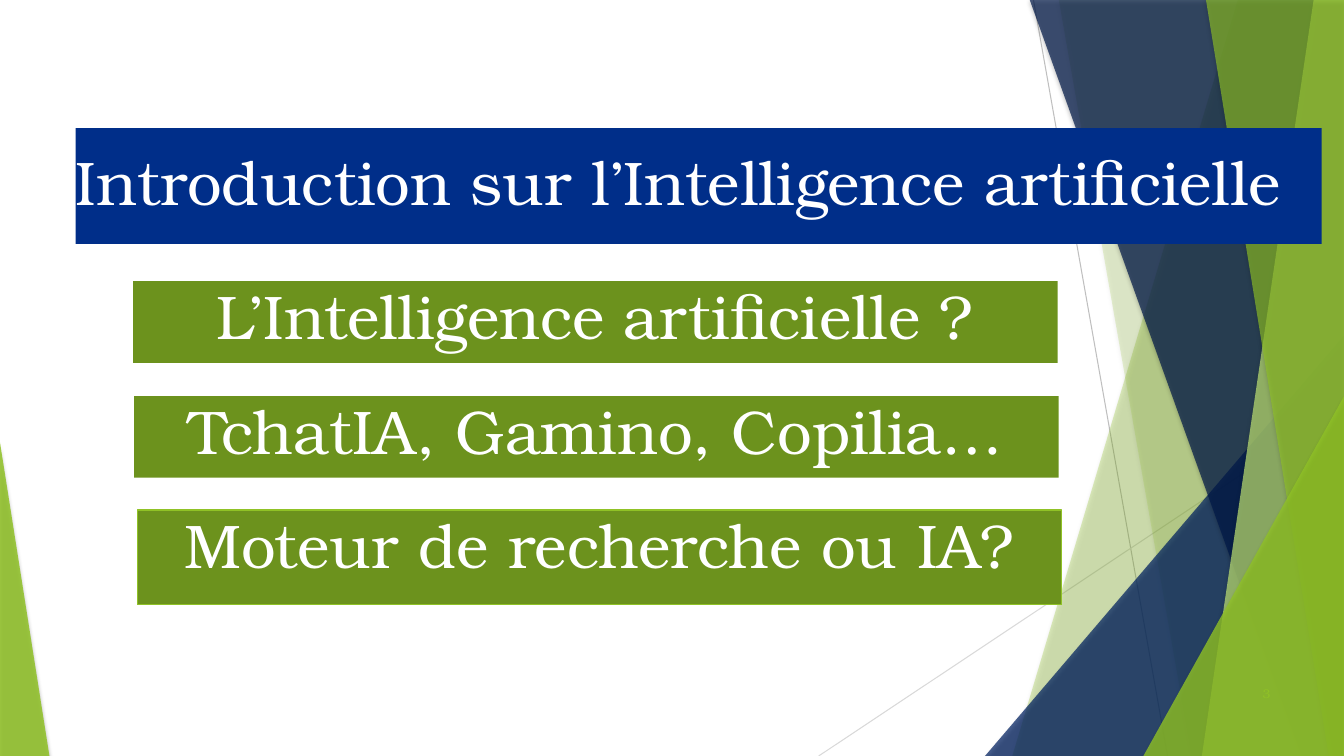
from lxml import etree
from pptx import Presentation
from pptx.dml.color import RGBColor
from pptx.enum import shapes, text
from pptx.oxml.ns import qn
from pptx.util import Inches, Pt

WHITE = RGBColor(0xFF, 0xFF, 0xFF)
BLUE = RGBColor(0x00, 0x2E, 0x89)
MOSS = RGBColor(0x6C, 0x92, 0x1D)
GREEN = RGBColor(0x90, 0xC2, 0x26)
LIME = RGBColor(0xC0, 0xE4, 0x74)
NAVY = RGBColor(0x00, 0x20, 0x60)
DARK_NAVY = RGBColor(0x00, 0x18, 0x48)
GRAY = RGBColor(0xBF, 0xBF, 0xBF)
LIGHT_GRAY = RGBColor(0xD9, 0xD9, 0xD9)
FONT = "TeX Gyre Bonum"
WIDTH, HEIGHT = 13.33, 7.5

THIN_LINES = [
    ((10.25, 0), (11.58, HEIGHT), GRAY),
    ((WIDTH, 4.03), (8.12, HEIGHT), LIGHT_GRAY),
]
# kind, geometry, colour, opacity
DECOR = [
    ("band", (12.28, 10.04), GREEN, 30),
    ("band", (10.5, 11.82), GREEN, 20),
    ("triangle", (9.77, 3.33, 3.56, 1), NAVY, 72),
    ("band", (10.21, 12.91), DARK_NAVY, 70),
    ("band", (13.03, 11.92), LIME, 70),
    ("band", (11.96, 13.18), GREEN, 65),
    ("triangle", (11.34, 3.93, 1.99, 1), GREEN, 80),
    ("triangle", (0, 4.39, 0.49, 0), GREEN, 85),
]
TITLE = ("Introduction sur l’Intelligence artificielle", (0.75, 1.27, 12.36, 1.15))
TOPICS = [
    ("L’Intelligence artificielle ?", (1.32, 2.79, 9.17, 0.81), None),
    ("TchatIA, Gamino, Copilia…", (1.33, 3.93, 9.17, 0.81), None),
    ("Moteur de recherche ou IA?", (1.36, 5.06, 9.17, 0.94), GREEN),
]
PAGE = ("3", (12.4, 6.74, 0.3, 0.3))


def add_line(s, start, end, color):
    line = s.shapes.add_connector(
        shapes.MSO_CONNECTOR.STRAIGHT, *map(Inches, start + end))
    line.line.color.rgb = color
    line.line.width = Pt(0.75)
    etree.SubElement(line._element.spPr, qn("a:effectLst"))


def add_band(s, top_x, bottom_x):
    top = -0.01
    builder = s.shapes.build_freeform(Inches(top_x), Inches(top))
    corners = [(WIDTH, top), (WIDTH, HEIGHT), (bottom_x, HEIGHT)]
    builder.add_line_segments([(Inches(x), Inches(y)) for x, y in corners])
    return builder.convert_to_shape()


def add_triangle(s, x, y, w, apex):
    sp = s.shapes.add_shape(shapes.MSO_SHAPE.ISOSCELES_TRIANGLE,
                            *map(Inches, (x, y, w, HEIGHT - y)))
    sp.adjustments[0] = apex
    return sp


def style_decor(sp, color, opacity):
    sp.fill.solid()
    sp.fill.fore_color.rgb = color
    sp.line.fill.background()
    srgb = sp._element.spPr.find(qn("a:solidFill"))[0]
    etree.SubElement(srgb, qn("a:alpha"), val=str(opacity * 1000))
    sp.shadow.inherit = False
    effects = sp._element.spPr.find(qn("a:effectLst"))
    shadow = etree.SubElement(effects, qn("a:outerShdw"), blurRad=str(Pt(3)),
                              dist=str(Pt(2)), dir="5400000", rotWithShape="0")
    black = etree.SubElement(shadow, qn("a:srgbClr"), val="000000")
    etree.SubElement(black, qn("a:alpha"), val="35000")


def write(sp, words, align, anchor, insets, size, color):
    tf = sp.text_frame
    tf.word_wrap = True
    tf.vertical_anchor = anchor
    tf.margin_left = tf.margin_right = Inches(insets[0])
    tf.margin_top = tf.margin_bottom = Inches(insets[1])
    p = tf.paragraphs[0]
    p.text = words
    p.alignment = align
    p.line_spacing = 0.9
    p.font.name, p.font.size, p.font.color.rgb = FONT, Pt(size), color


def add_box(s, box, fill, outline=None):
    sp = s.shapes.add_shape(shapes.MSO_SHAPE.RECTANGLE, *map(Inches, box))
    sp.shadow.inherit = False
    sp.fill.solid()
    sp.fill.fore_color.rgb = fill
    if outline is None:
        sp.line.fill.background()
    else:
        sp.line.color.rgb = outline
        sp.line.width = Pt(0)
    return sp


def main():
    prs = Presentation()
    prs.slide_width, prs.slide_height = Inches(WIDTH), Inches(HEIGHT)
    s = prs.slides.add_slide(prs.slide_layouts[6])
    for start, end, color in THIN_LINES:
        add_line(s, start, end, color)
    makers = {"band": add_band, "triangle": add_triangle}
    for kind, geometry, color, opacity in DECOR:
        style_decor(makers[kind](s, *geometry), color, opacity)

    left, center = text.PP_ALIGN.LEFT, text.PP_ALIGN.CENTER
    top, middle = text.MSO_ANCHOR.TOP, text.MSO_ANCHOR.MIDDLE
    words, box = PAGE
    write(s.shapes.add_textbox(*map(Inches, box)), words,
          text.PP_ALIGN.RIGHT, middle, (0.1, 0.05), 9, GREEN)
    words, box = TITLE
    write(add_box(s, box, BLUE), words, left, middle, (0, 0), 44, WHITE)
    for words, box, outline in TOPICS:
        write(add_box(s, box, MOSS, outline), words, center, top,
              (0.1, 0.05), 44, WHITE)
    prs.save("out.pptx")


if __name__ == "__main__":
    main()
